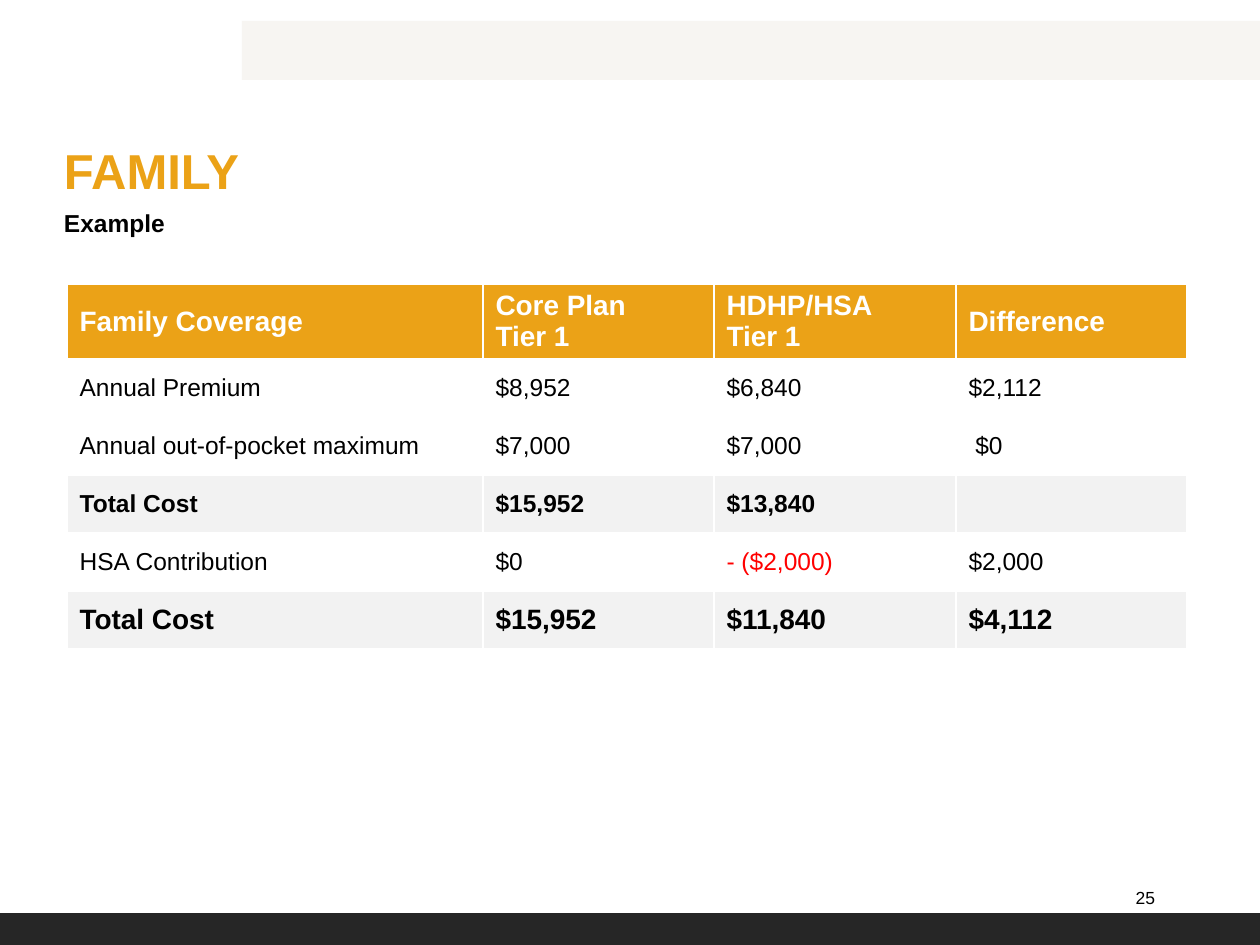
import pptx
import pptx.util
import pptx.dml.color
import pptx.enum.shapes
import pptx.enum.text
import pptx.oxml

PX = 914400 // 126
FONT = "Arial"
COLORS = {
    "gold": "EBA217", "black": "000000", "white": "FFFFFF", "red": "FF0000",
    "cream": "F7F5F2", "gray": "F2F2F2", "charcoal": "262626",
}
BANDS = [("cream", (242, 21, 1018, 59)), ("charcoal", (0, 913, 1260, 32))]
COLUMN_WIDTHS = [416, 231, 242, 231]
HEADER_HEIGHT, ROW_HEIGHT = 75, 58
TABLE_LEFT, TABLE_TOP = 67, 284
STYLES = {
    "header": ("gold", "white", 16, True),
    "plain": ("white", "black", 14, False),
    "subtotal": ("gray", "black", 14, True),
    "total": ("gray", "black", 16, True),
}
ROWS = [
    ("header", ["Family Coverage", "Core Plan\nTier 1", "HDHP/HSA\nTier 1", "Difference"]),
    ("plain", ["Annual Premium", "$8,952", "$6,840", "$2,112"]),
    ("plain", ["Annual out-of-pocket maximum", "$7,000", "$7,000", " $0"]),
    ("subtotal", ["Total Cost", "$15,952", "$13,840", ""]),
    ("plain", ["HSA Contribution", "$0", "- ($2,000)", "$2,000"]),
    ("total", ["Total Cost", "$15,952", "$11,840", "$4,112"]),
]
ANCHOR = pptx.enum.text.MSO_ANCHOR


def emu(*lengths):
    return [pptx.util.Emu(length * PX) for length in lengths]


def color(name):
    return pptx.dml.color.RGBColor.from_string(COLORS[name])


def paint(shape, name):
    shape.fill.solid()
    shape.fill.fore_color.rgb = color(name)


def write(frame, text, size, name, bold):
    frame.text = text
    for para in frame.paragraphs:
        para.font.size = pptx.util.Pt(size)
        for span in para.runs:
            span.font.name = FONT
            span.font.size = pptx.util.Pt(size)
            span.font.bold = bold
            span.font.color.rgb = color(name)


def fit(frame, anchor, right=0):
    frame.margin_left = frame.margin_top = frame.margin_bottom = 0
    frame.margin_right = right * PX
    frame.vertical_anchor = anchor
    frame.word_wrap = True
    frame.auto_size = pptx.enum.text.MSO_AUTO_SIZE.NONE


def add_borders(cell):
    properties = cell._tc.get_or_add_tcPr()
    for side in "LRTB":
        properties.append(pptx.oxml.parse_xml(
            f'<a:ln{side} xmlns:a="http://schemas.openxmlformats.org/drawingml/2006/main" '
            f'w="12700"><a:solidFill><a:srgbClr val="{COLORS["white"]}"/></a:solidFill></a:ln{side}>'))


deck = pptx.Presentation()
deck.slide_width, deck.slide_height = emu(1260, 945)
page = deck.slides.add_slide(deck.slide_layouts[5])

for name, place in BANDS:
    band = page.shapes.add_shape(pptx.enum.shapes.MSO_SHAPE.RECTANGLE, *emu(*place))
    band.shadow.inherit = False
    paint(band, name)
    band.line.fill.background()

title = page.shapes.title
title.left, title.top, title.width, title.height = emu(64, 136, 1109, 63)
fit(title.text_frame, ANCHOR.BOTTOM)
write(title.text_frame, "FAMILY", 28, "gold", True)
title.text_frame.paragraphs[0].alignment = pptx.enum.text.PP_ALIGN.LEFT

subtitle = page.shapes.add_textbox(*emu(64, 200, 1109, 42))
fit(subtitle.text_frame, ANCHOR.MIDDLE)
write(subtitle.text_frame, "Example", 14, "black", True)
subtitle.text_frame.paragraphs[0].line_spacing = 1.14

number = page.shapes.add_textbox(*emu(1126, 873, 42, 50))
fit(number.text_frame, ANCHOR.MIDDLE, right=13)
write(number.text_frame, "25", 10, "black", False)
number.text_frame.paragraphs[0].alignment = pptx.enum.text.PP_ALIGN.RIGHT

table_height = HEADER_HEIGHT + ROW_HEIGHT * (len(ROWS) - 1)
table = page.shapes.add_table(
    len(ROWS), len(COLUMN_WIDTHS),
    *emu(TABLE_LEFT, TABLE_TOP, sum(COLUMN_WIDTHS), table_height)).table
for column, width in zip(table.columns, COLUMN_WIDTHS):
    column.width = width * PX
for row, (style, texts) in zip(table.rows, ROWS):
    row.height = (HEADER_HEIGHT if style == "header" else ROW_HEIGHT) * PX
    fill, ink, size, bold = STYLES[style]
    for cell, text in zip(row.cells, texts):
        add_borders(cell)
        paint(cell, fill)
        cell.vertical_anchor = ANCHOR.MIDDLE
        write(cell.text_frame, text, size, "red" if text.startswith("-") else ink, bold)

deck.save("out.pptx")
